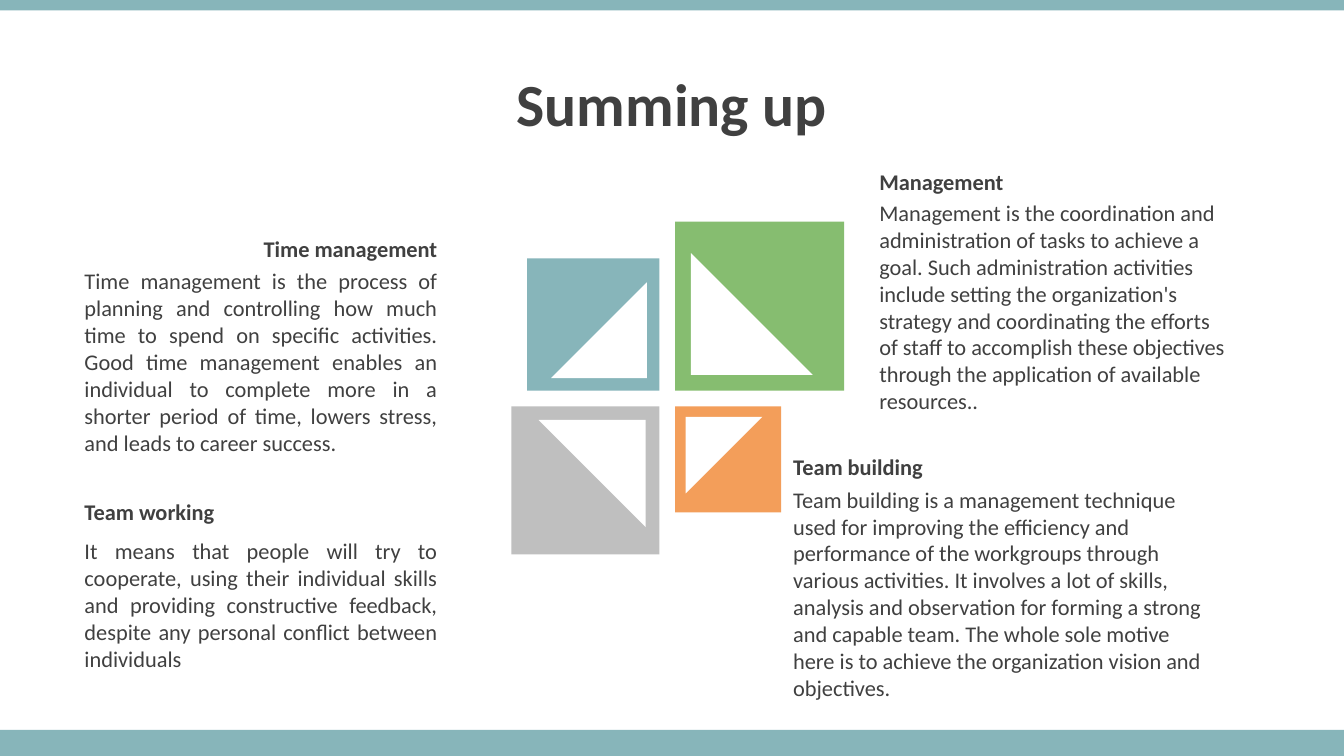
from dataclasses import dataclass

from pptx import Presentation
from pptx.dml.color import RGBColor
from pptx.enum.shapes import MSO_SHAPE
from pptx.enum.text import MSO_ANCHOR, PP_ALIGN
from pptx.util import Pt

SCALE = 9525
WIDE, HIGH = 1280, 720
TEAL, INK, WHITE = "87B5BA", "404040", "FFFFFF"
NEAR_X, FAR_X, NEAR_Y, FAR_Y = 628, 643, 372, 387
INSET, RATIO = 0.095, 0.72


@dataclass
class Box:
    """A frame in px."""
    left: int
    top: int
    width: int
    height: int

    def emu(self) -> list[int]:
        """Return the frame in EMU."""
        return [n * SCALE for n in (self.left, self.top, self.width, self.height)]


@dataclass
class Tile:
    """A square that grows outward from the central cross."""
    side: int
    fill: str
    right: bool
    low: bool
    turn: int


@dataclass
class Topic:
    """A heading with its body text."""
    head: str
    body: str
    head_box: Box
    body_box: Box
    head_side: PP_ALIGN = PP_ALIGN.LEFT
    body_side: PP_ALIGN = PP_ALIGN.LEFT


TILES = [
    Tile(126, TEAL, False, False, 270),
    Tile(161, "86BD70", True, False, 0),
    Tile(101, "F39E5A", True, True, 90),
    Tile(141, "BFBFBF", False, True, 180),
]

TOPICS = [
    Topic("Time management",
          "Time management is the process of planning and controlling how much time "
          "to spend on specific activities. Good time management enables an individual "
          "to complete more in a shorter period of time, lowers stress, and leads to "
          "career success.",
          Box(71, 219, 355, 36), Box(71, 250, 355, 191),
          PP_ALIGN.RIGHT, PP_ALIGN.JUSTIFY),
    Topic("Team working",
          "It means that people will try to cooperate, using their individual skills "
          "and providing constructive feedback, despite any personal conflict between "
          "individuals",
          Box(71, 470, 355, 36), Box(71, 507, 355, 139),
          PP_ALIGN.JUSTIFY, PP_ALIGN.JUSTIFY),
    Topic("Management",
          "Management is the coordination and administration of tasks to achieve a "
          "goal. Such administration activities include setting the organization's "
          "strategy and coordinating the efforts of staff to accomplish these "
          "objectives through the application of available resources..",
          Box(828, 155, 355, 36), Box(828, 185, 355, 217)),
    Topic("Team building",
          "Team building is a management technique used for improving the efficiency "
          "and performance of the workgroups through various activities. It involves "
          "a lot of skills, analysis and observation for forming a strong and capable "
          "team. The whole sole motive here is to achieve the organization vision and "
          "objectives.",
          Box(746, 427, 410, 36), Box(746, 458, 410, 262)),
]


def tint(code: str) -> RGBColor:
    """Turn a hex string into a colour."""
    return RGBColor.from_string(code)


def shape(slide, kind: MSO_SHAPE, box: Box, fill: str, turn: int = 0) -> None:
    """Draw a plain filled shape."""
    item = slide.shapes.add_shape(kind, *box.emu())
    item.shadow.inherit = False
    item.fill.solid()
    item.fill.fore_color.rgb = tint(fill)
    item.line.fill.background()
    item.rotation = turn


def write(slide, text: str, box: Box, *, size: float = 16, bold: bool = False,
          align: PP_ALIGN = PP_ALIGN.LEFT, anchor: MSO_ANCHOR = MSO_ANCHOR.TOP,
          line: float = 1.0, before: int = 0) -> None:
    """Add a wrapped text box with one paragraph."""
    frame = slide.shapes.add_textbox(*box.emu()).text_frame
    frame.word_wrap = True
    frame.vertical_anchor = anchor
    para = frame.paragraphs[0]
    para.alignment = align
    para.line_spacing = line
    para.space_before = Pt(before)
    run = para.add_run()
    run.text = text
    run.font.name = "Calibri"
    run.font.size = Pt(size)
    run.font.bold = bold
    run.font.color.rgb = tint(INK)


def draw_tile(slide, tile: Tile) -> None:
    """Draw a square and the triangle set in its inner corner."""
    side = tile.side
    left = FAR_X if tile.right else NEAR_X - side
    top = FAR_Y if tile.low else NEAR_Y - side
    shape(slide, MSO_SHAPE.RECTANGLE, Box(left, top, side, side), tile.fill)
    gap, leg = round(side * INSET), round(side * RATIO)
    far = side - gap - leg
    inner = Box(left + (gap if tile.right else far),
                top + (gap if tile.low else far), leg, leg)
    shape(slide, MSO_SHAPE.RIGHT_TRIANGLE, inner, WHITE, tile.turn)


def draw_topic(slide, topic: Topic) -> None:
    """Write a heading and its body."""
    write(slide, topic.body, topic.body_box, align=topic.body_side)
    write(slide, topic.head, topic.head_box, bold=True, align=topic.head_side)


def main() -> None:
    """Build and save the slide."""
    deck = Presentation()
    deck.slide_width, deck.slide_height = WIDE * SCALE, HIGH * SCALE
    slide = deck.slides.add_slide(deck.slide_layouts[6])
    for top, height in ((HIGH - 25, 25), (0, 10)):
        shape(slide, MSO_SHAPE.RECTANGLE, Box(0, top, WIDE, height), TEAL)
    write(slide, "Summing up", Box(0, 62, WIDE, 81), size=42.7, bold=True,
          align=PP_ALIGN.CENTER, anchor=MSO_ANCHOR.MIDDLE, line=0.9, before=10)
    for tile in TILES:
        draw_tile(slide, tile)
    for topic in TOPICS:
        draw_topic(slide, topic)
    deck.save("out.pptx")


if __name__ == "__main__":
    main()
